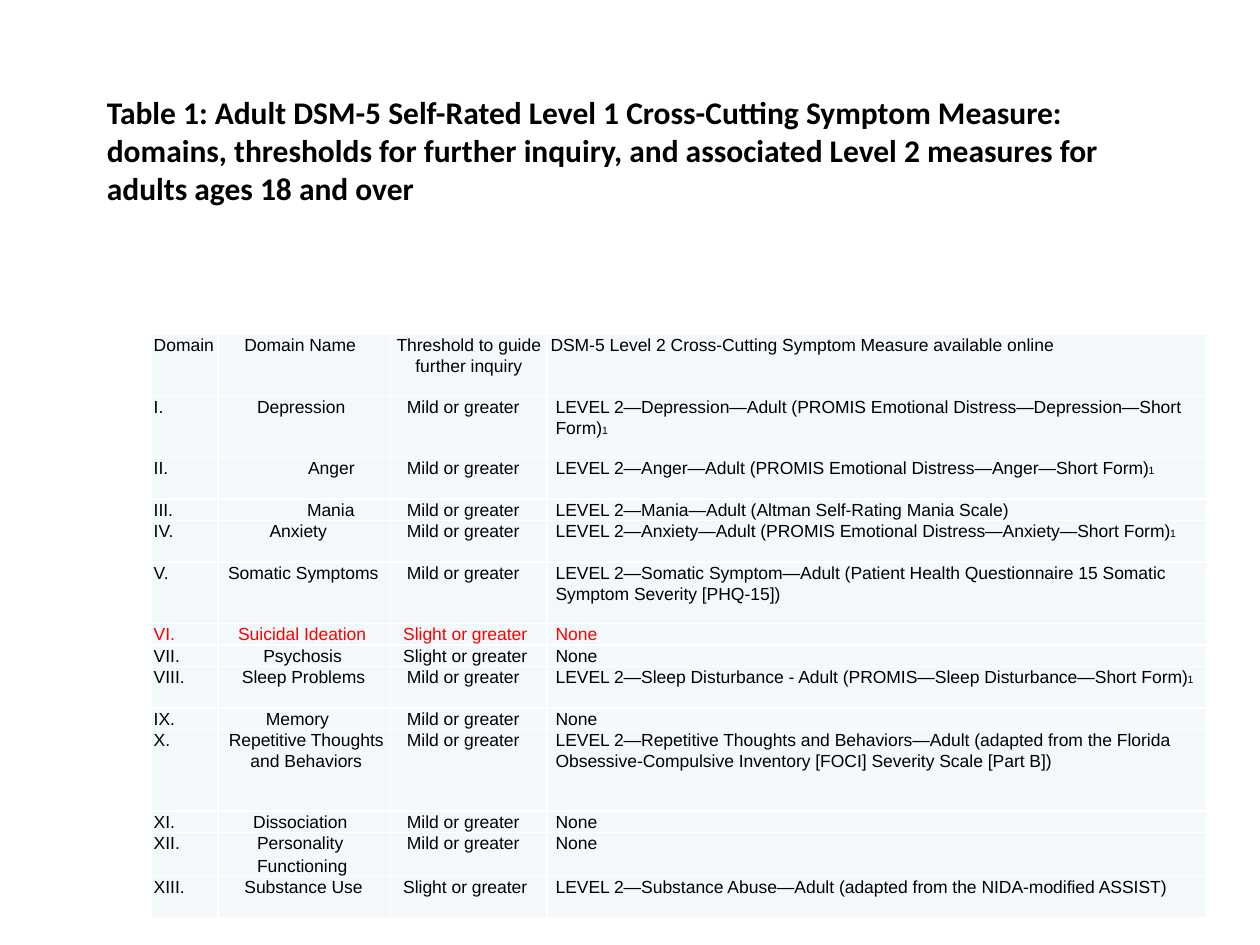
from dataclasses import dataclass

from pptx import Presentation
from pptx.dml.color import RGBColor as Color
from pptx.enum.text import MSO_AUTO_SIZE as AutoSize, PP_ALIGN as Align
from pptx.oxml import parse_xml
from pptx.oxml.ns import nsdecls
from pptx.util import Inches, Pt


@dataclass(frozen=True)
class Theme:
    text: str = "000000"
    alert: str = "FF0000"
    cell: str = "F3F9FA"
    border: str = "FFFFFF"
    title_font: str = "Calibri"
    body_font: str = "Arial"
    title_size: float = 18
    body_size: float = 10
    note_size: float = 6
    leading: float = 12.1


THEME = Theme()
WIDTH, HEIGHT = 10, 7.5
COLUMN_SHARES = (0.053, 0.137, 0.124, 0.524)
NUMBER_INDENT, MEASURE_INDENT = 0.02, 0.07
THRESHOLD_INDENTS = {"Mild": 0.13, "Slight": 0.1}
NOTE = "^"  # parts a measure from its footnote number
ALERT_DOMAIN = "VI."
CENTERED = {"II.", "III.", "X."}
TITLE = (
    "Table 1: Adult DSM-5 Self-Rated Level 1 Cross-Cutting Symptom Measure: "
    "domains, thresholds for further inquiry, and associated Level 2 measures "
    "for adults ages 18 and over"
)
HEADINGS = (
    ("Domain", NUMBER_INDENT, Align.LEFT),
    ("Domain Name", 0.21, Align.LEFT),
    ("Threshold to guide\nfurther inquiry", 0, Align.CENTER),
    ("DSM-5 Level 2 Cross-Cutting Symptom Measure available online", 0.03, Align.LEFT),
)
# Height in text lines, number, name, indent of the name, threshold, measure
DOMAINS = (
    (3, "I.", "Depression", 0.31, "Mild",
     "LEVEL 2—Depression—Adult (PROMIS Emotional Distress—Depression—Short\nForm)^1"),
    (2, "II.", "Anger", 0.43, "Mild",
     "LEVEL 2—Anger—Adult (PROMIS Emotional Distress—Anger—Short Form)^1"),
    (1, "III.", "Mania", 0.42, "Mild",
     "LEVEL 2—Mania—Adult (Altman Self-Rating Mania Scale)"),
    (2, "IV.", "Anxiety", 0.41, "Mild",
     "LEVEL 2—Anxiety—Adult (PROMIS Emotional Distress—Anxiety—Short Form)^1"),
    (3, "V.", "Somatic Symptoms", 0.08, "Mild",
     "LEVEL 2—Somatic Symptom—Adult (Patient Health Questionnaire 15 Somatic\n"
     "Symptom Severity [PHQ-15])"),
    (1, "VI.", "Suicidal Ideation", 0.16, "Slight", "None"),
    (1, "VII.", "Psychosis", 0.36, "Slight", "None"),
    (2, "VIII.", "Sleep Problems", 0.19, "Mild",
     "LEVEL 2—Sleep Disturbance - Adult (PROMIS—Sleep Disturbance—Short Form)^1"),
    (1, "IX.", "Memory", 0.38, "Mild", "None"),
    (4, "X.", "Repetitive Thoughts\nand Behaviors", 0.03, "Mild",
     "LEVEL 2—Repetitive Thoughts and Behaviors—Adult (adapted from the Florida\n"
     "Obsessive-Compulsive Inventory [FOCI] Severity Scale [Part B])"),
    (1, "XI.", "Dissociation", 0.28, "Mild", "None"),
    (2, "XII.", "Personality\nFunctioning", 0.31, "Mild", "None"),
    (2, "XIII.", "Substance Use", 0.21, "Slight",
     "LEVEL 2—Substance Abuse—Adult (adapted from the NIDA-modified ASSIST)"),
)


def row_height(lines):
    return Inches(0.01 + 0.16 * lines)


def add_span(para, text, *, size, font=THEME.body_font, color=THEME.text, bold=False):
    span = para.add_run()
    span.text = text
    span.font.name, span.font.size, span.font.bold = font, Pt(size), bold
    span.font.color.rgb = Color.from_string(color)


def write_text(frame, text, *, indent=0, align=Align.LEFT, color=THEME.text):
    """Write one paragraph per line, with any footnote number set small."""
    for index, line in enumerate(text.split("\n")):
        para = frame.add_paragraph() if index else frame.paragraphs[0]
        para.alignment = align
        para.line_spacing = Pt(THEME.leading)
        properties = para._p.get_or_add_pPr()
        properties.set("marL", str(Inches(indent)))
        properties.set("indent", "0")
        body, _, note = line.partition(NOTE)
        add_span(para, body, size=THEME.body_size, color=color)
        if note:
            add_span(para, note, size=THEME.note_size, color=color)


def style_cell(cell):
    cell.margin_left = cell.margin_right = cell.margin_top = cell.margin_bottom = 0
    properties = cell._tc.get_or_add_tcPr()
    for side in ("lnL", "lnR", "lnT", "lnB"):
        properties.append(parse_xml(
            f'<a:{side} {nsdecls("a")} w="{Pt(1)}"><a:solidFill>'
            f'<a:srgbClr val="{THEME.border}"/></a:solidFill></a:{side}>'
        ))
    cell.fill.solid()
    cell.fill.fore_color.rgb = Color.from_string(THEME.cell)


def fill_row(row, entries, color=THEME.text):
    for cell, (text, indent, align) in zip(row.cells, entries):
        style_cell(cell)
        write_text(cell.text_frame, text, indent=indent, align=align, color=color)


def domain_entries(number, name, indent, threshold, measure):
    return (
        (number, NUMBER_INDENT, Align.LEFT),
        (name, indent, Align.CENTER if number in CENTERED else Align.LEFT),
        (f"{threshold} or greater", THRESHOLD_INDENTS[threshold], Align.LEFT),
        (measure, MEASURE_INDENT, Align.LEFT),
    )


def add_domain_table(page):
    heights = [row_height(lines) for lines in (3, *(domain[0] for domain in DOMAINS))]
    widths = [Inches(share * WIDTH) for share in COLUMN_SHARES]
    table = page.shapes.add_table(
        len(heights), len(widths), Inches(0.12 * WIDTH), Inches(2.65),
        sum(widths), sum(heights),
    ).table
    table.first_row = table.horz_banding = False
    for column, width in zip(table.columns, widths):
        column.width = width
    for row, height in zip(table.rows, heights):
        row.height = height
    fill_row(table.rows[0], HEADINGS)
    for index, (_, *domain) in enumerate(DOMAINS, start=1):
        color = THEME.alert if domain[0] == ALERT_DOMAIN else THEME.text
        fill_row(table.rows[index], domain_entries(*domain), color)
    functioning = table.cell(12, 1).text_frame.paragraphs[1]
    functioning.line_spacing = 1.15


def add_title(page):
    box = page.shapes.add_textbox(
        Inches(0.075 * WIDTH), Inches(0.69), Inches(0.85 * WIDTH), Inches(1.01)
    )
    frame = box.text_frame
    frame.word_wrap = True
    frame.auto_size = AutoSize.SHAPE_TO_FIT_TEXT
    add_span(frame.paragraphs[0], TITLE, size=THEME.title_size,
             font=THEME.title_font, bold=True)


def main():
    deck = Presentation()
    deck.slide_width, deck.slide_height = Inches(WIDTH), Inches(HEIGHT)
    page = deck.slides.add_slide(deck.slide_layouts[6])
    add_domain_table(page)
    add_title(page)
    deck.save("out.pptx")


if __name__ == "__main__":
    main()
